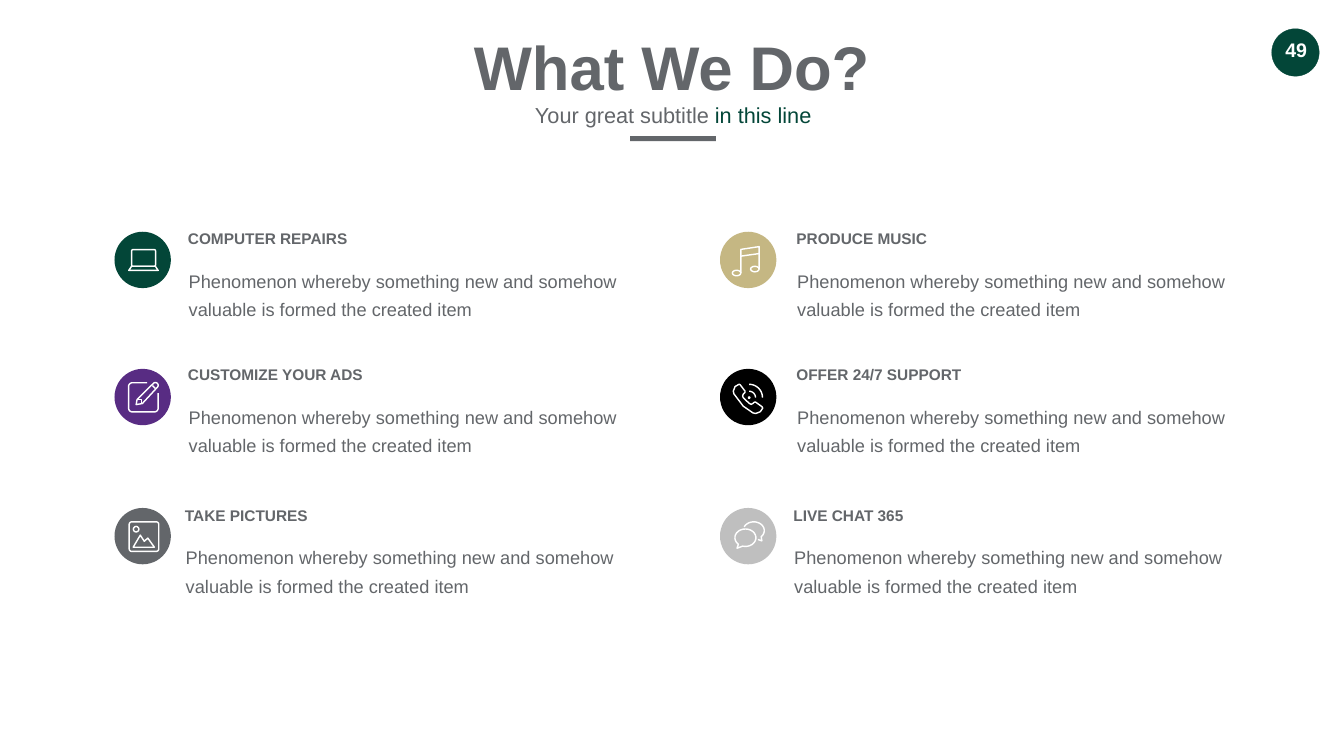
import math

import pptx
import pptx.dml.color
import pptx.enum.shapes
import pptx.enum.text
import pptx.util

Cm = pptx.util.Cm
Pt = pptx.util.Pt
SHAPE = pptx.enum.shapes.MSO_SHAPE
ALIGN = pptx.enum.text.PP_ALIGN
ANCHOR = pptx.enum.text.MSO_ANCHOR

COLORS = {
    "gray": "63666A", "green": "034638", "purple": "582C83", "gold": "C5B783",
    "black": "000000", "silver": "BFBFBF", "white": "FFFFFF",
}
FONT = "Arial"
BODY = "Phenomenon whereby something new and somehow valuable is formed the created item"

# Grid of services, in cm
CIRCLE_LEFT, CIRCLE_PITCH, CIRCLE_SIZE = 5.77, 30.51, 2.84
TEXT_PITCH = 30.66
ROWS = [  # circle top, heading left, heading top
    (11.68, 9.22, 11.43),
    (18.59, 9.22, 18.29),
    (25.6, 9.07, 25.37),
]


def rgb(name):
    return pptx.dml.color.RGBColor.from_string(COLORS[name])


def paint(shape, fill=None, line=None, line_width=2):
    """Set fill and line of a shape, leaving out whichever has no colour."""
    shape.shadow.inherit = False
    if fill:
        shape.fill.solid()
        shape.fill.fore_color.rgb = rgb(fill)
    else:
        shape.fill.background()
    if line:
        shape.line.color.rgb = rgb(line)
        shape.line.width = Pt(line_width)
    else:
        shape.line.fill.background()


def add_preset(slide, kind, left, top, width, height, **style):
    shape = slide.shapes.add_shape(kind, Cm(left), Cm(top), Cm(width), Cm(height))
    paint(shape, **style)
    return shape


def add_text(slide, text, left, top, width, height, size=26, color="gray",
             bold=False, align=ALIGN.LEFT, anchor=ANCHOR.TOP, wrap=False,
             spacing=None, insets=(0.25, 0.13)):
    """Add a text box; text is a string or a list of (string, colour) runs."""
    box = slide.shapes.add_textbox(Cm(left), Cm(top), Cm(width), Cm(height))
    frame = box.text_frame
    frame.word_wrap = wrap
    frame.auto_size = pptx.enum.text.MSO_AUTO_SIZE.SHAPE_TO_FIT_TEXT
    frame.vertical_anchor = anchor
    frame.margin_left = frame.margin_right = Cm(insets[0])
    frame.margin_top = frame.margin_bottom = Cm(insets[1])
    paragraph = frame.paragraphs[0]
    paragraph.alignment = align
    if spacing:
        paragraph.line_spacing = spacing
    for content, run_color in [(text, color)] if isinstance(text, str) else text:
        run = paragraph.add_run()
        run.text = content
        run.font.name = FONT
        run.font.size = Pt(size)
        run.font.bold = bold
        run.font.color.rgb = rgb(run_color)


def arc(x, y, radius_x, radius_y, start, end, steps=24):
    """Points on an ellipse, angles in degrees running clockwise from the right."""
    angles = [math.radians(start + (end - start) * i / steps) for i in range(steps + 1)]
    return [(x + radius_x * math.cos(a), y + radius_y * math.sin(a)) for a in angles]


def add_stroke(slide, origin, points, close=False):
    """Draw a white outline through points given in cm from the origin."""
    placed = [(Cm(origin[0] + x), Cm(origin[1] + y)) for x, y in points]
    builder = slide.shapes.build_freeform(*placed[0])
    builder.add_line_segments(placed[1:], close=close)
    paint(builder.convert_to_shape(), line="white")


def add_part(slide, origin, kind, left, top, width, height, fill=None):
    """Draw a white preset shape of an icon, placed from the origin."""
    return add_preset(slide, kind, origin[0] + left, origin[1] + top, width, height,
                      fill=fill, line=None if fill else "white")


# Icons: each is drawn from the top left corner of its circle
def draw_laptop(slide, origin):
    lid = add_part(slide, origin, SHAPE.ROUNDED_RECTANGLE, 0.86, 0.9, 1.21, 0.84)
    lid.adjustments[0] = 0.08
    base = [(0.86, 1.74), (2.06, 1.74), (2.2, 1.95), (0.72, 1.95)]
    add_stroke(slide, origin, base, close=True)


def draw_music(slide, origin):
    add_stroke(slide, origin, [(1.05, 2.08), (1.05, 0.89), (1.97, 0.75), (1.97, 1.88)])
    add_stroke(slide, origin, [(1.05, 1.23), (1.97, 1.1)])
    for left, top in [(0.62, 1.94), (1.54, 1.74)]:
        add_part(slide, origin, SHAPE.OVAL, left, top, 0.43, 0.28)


def draw_pencil(slide, origin):
    page = [(1.65, 0.7)] + arc(0.9, 0.89, 0.19, 0.19, 270, 180, 8)
    page += arc(0.9, 1.98, 0.19, 0.19, 180, 90, 8)
    page += arc(2.01, 1.98, 0.19, 0.19, 90, 0, 8) + [(2.2, 1.22)]
    add_stroke(slide, origin, page)
    pencil = [(1.09, 1.8), (1.14, 1.54)] + arc(2.06, 0.83, 0.14, 0.14, -135, 45, 12)
    add_stroke(slide, origin, pencil + [(1.4, 1.75)], close=True)
    add_stroke(slide, origin, [(1.19, 1.54), (1.35, 1.54), (1.35, 1.7)])
    add_stroke(slide, origin, [(1.91, 0.84), (2.06, 0.99)])


def draw_phone(slide, origin):
    handset = [
        (0.97, 0.77), (1.02, 0.81), (1.26, 1.12), (1.26, 1.19), (1.17, 1.28), (1.14, 1.37),
        (1.17, 1.45), (1.32, 1.6), (1.49, 1.75), (1.57, 1.79), (1.65, 1.75), (1.73, 1.68),
        (1.8, 1.68), (2.12, 1.91), (2.15, 1.98), (2.03, 2.16), (1.8, 2.25), (1.66, 2.22),
        (1.17, 1.88), (0.7, 1.26), (0.67, 1.12), (0.76, 0.89),
    ]
    add_stroke(slide, origin, handset, close=True)
    for radius in (0.32, 0.67):
        add_stroke(slide, origin, arc(1.47, 1.45, radius, radius, -90, 0))
    add_part(slide, origin, SHAPE.OVAL, 1.4, 1.38, 0.14, 0.14, fill="white")


def draw_photo(slide, origin):
    frame = add_part(slide, origin, SHAPE.ROUNDED_RECTANGLE, 0.74, 0.7, 1.49, 1.49)
    frame.adjustments[0] = 0.08
    add_part(slide, origin, SHAPE.OVAL, 0.95, 0.93, 0.28, 0.28)
    mountains = [(0.94, 1.98), (1.3, 1.37), (1.5, 1.68), (1.68, 1.52), (2.01, 1.98)]
    add_stroke(slide, origin, mountains, close=True)


def draw_chat(slide, origin):
    front = arc(1.28, 1.5, 0.53, 0.44, 132, 465) + [(0.86, 2.03)]
    add_stroke(slide, origin, front, close=True)
    back = arc(1.7, 1.14, 0.53, 0.44, 205, 405) + [(2.11, 1.66), (1.91, 1.59)]
    add_stroke(slide, origin, back)


SERVICES = [  # heading, heading width, circle colour, icon; row by row
    ("COMPUTER REPAIRS", 8.64, "green", draw_laptop),
    ("PRODUCE MUSIC", 7.16, "gold", draw_music),
    ("CUSTOMIZE YOUR ADS", 9.42, "purple", draw_pencil),
    ("OFFER 24/7 SUPPORT", 8.92, "black", draw_phone),
    ("TAKE PICTURES", 6.76, "gray", draw_photo),
    ("LIVE CHAT 365", 6.12, "silver", draw_chat),
]


def add_service(slide, index, heading, width, color, draw_icon):
    row, column = divmod(index, 2)
    circle_top, text_left, text_top = ROWS[row]
    text_left += column * TEXT_PITCH
    origin = (CIRCLE_LEFT + column * CIRCLE_PITCH, circle_top)
    add_preset(slide, SHAPE.OVAL, *origin, CIRCLE_SIZE, CIRCLE_SIZE, fill=color)
    draw_icon(slide, origin)
    add_text(slide, heading, text_left, text_top, width, 1.19, size=22, bold=True,
             anchor=ANCHOR.MIDDLE)
    add_text(slide, BODY, text_left - 0.32, text_top + 1.55, 23.42, 3.3, wrap=True,
             spacing=Pt(40.4), insets=(0.61, 0.3))


def main():
    presentation = pptx.Presentation()
    presentation.slide_width, presentation.slide_height = Cm(67.72), Cm(38.1)
    slide = presentation.slides.add_slide(presentation.slide_layouts[6])

    # Page number
    add_preset(slide, SHAPE.OVAL, 64.08, 1.45, 2.39, 2.39, fill="green", line="green",
               line_width=0.5)
    add_text(slide, "49", 64.19, 1.68, 2.24, 1.7, size=28, color="white", bold=True,
             align=ALIGN.CENTER, insets=(0.51, 0.25))

    # Title, subtitle and rule
    add_text(slide, "What We Do?", 23.52, 1.35, 20.65, 4.01, size=88, bold=True,
             align=ALIGN.CENTER)
    add_text(slide, [("Your great subtitle ", "gray"), ("in this line", "green")],
             26.26, 4.55, 15.32, 2.06, size=31, align=ALIGN.CENTER, spacing=1.2,
             insets=(0.61, 0.3))
    add_preset(slide, SHAPE.RECTANGLE, 31.75, 6.86, 4.32, 0.25, fill="gray")

    # Services
    for index, service in enumerate(SERVICES):
        add_service(slide, index, *service)

    presentation.save("out.pptx")


if __name__ == "__main__":
    main()
